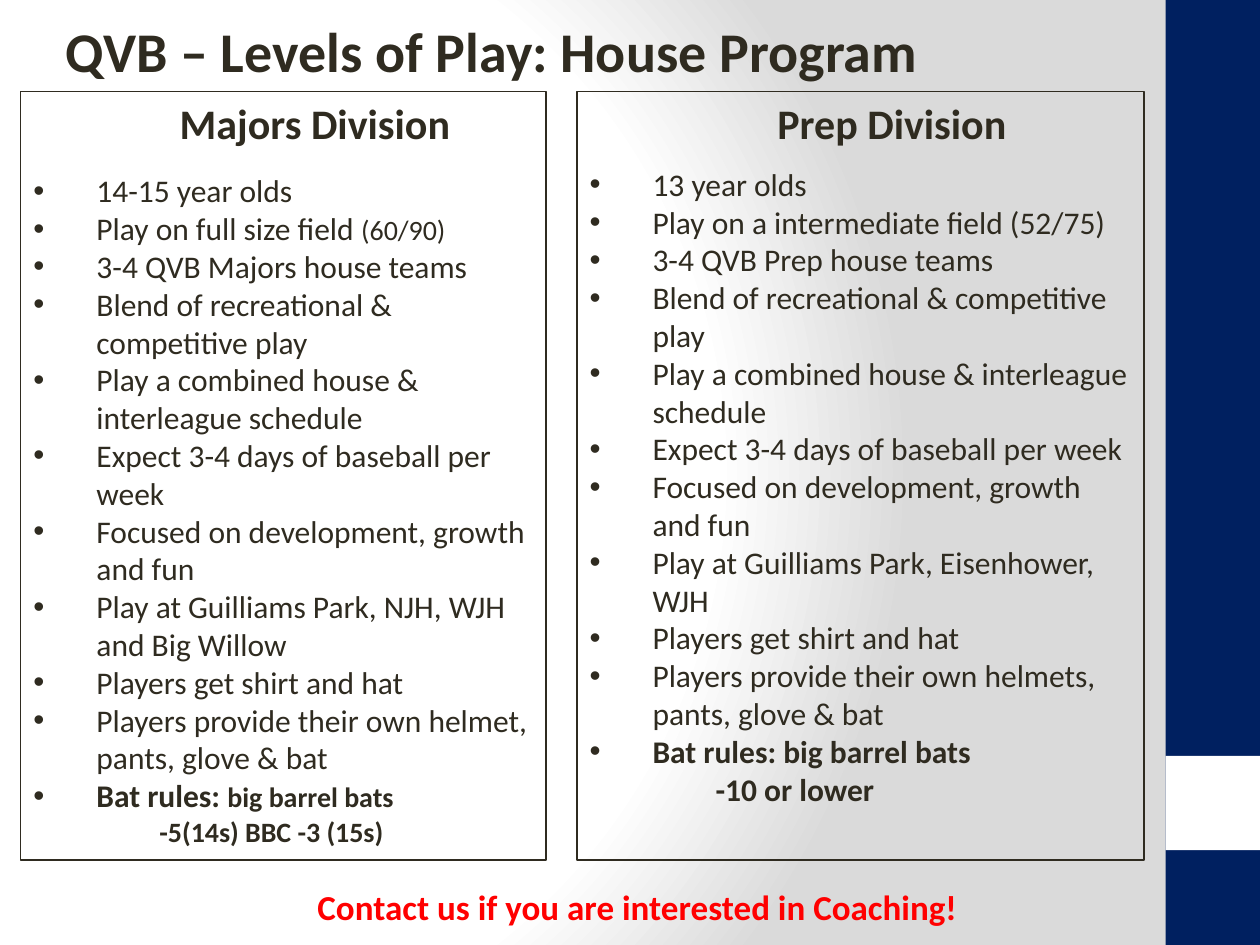
from lxml import etree
from pptx import Presentation
from pptx.dml.color import RGBColor
from pptx.enum.shapes import MSO_SHAPE
from pptx.enum.text import MSO_ANCHOR, MSO_AUTO_SIZE, PP_ALIGN
from pptx.oxml import parse_xml
from pptx.oxml.ns import nsdecls, qn
from pptx.util import Cm, Pt

RECTANGLE = MSO_SHAPE.RECTANGLE
CENTER, LEFT = PP_ALIGN.CENTER, PP_ALIGN.LEFT
TOP, NO_FIT = MSO_ANCHOR.TOP, MSO_AUTO_SIZE.NONE

FONT = "Calibri"
INK, NAVY, WHITE, GREY, RED = "2F2B20", "002060", "FFFFFF", "DADADA", "FF0000"
INDENT = 1.27
PANEL_TOP, PANEL_HEIGHT = 1.84, 15.5

TITLE = "QVB – Levels of Play: House Program"
CONTACT = "Contact us if you are interested in Coaching!"
# Every line is a list of (text, size) parts.
DIVISIONS = [
    {
        "heading": "Majors Division", "left": 0.42, "width": 10.59, "gap": 13.4,
        "points": [
            [("14-15 year olds", 18)],
            [("Play on full size field ", 18), ("(60/90)", 16)],
            [("3-4 QVB Majors house teams", 18)],
            [("Blend of recreational & competitive play", 18)],
            [("Play a combined house & interleague schedule", 18)],
            [("Expect 3-4 days of baseball per week", 18)],
            [("Focused on development, growth and fun", 18)],
            [("Play at Guilliams Park, NJH, WJH and Big Willow", 18)],
            [("Players get shirt and hat", 18)],
            [("Players provide their own helmet, pants, glove & bat", 18)],
        ],
        "bat_rules": [("Bat rules: ", 18), ("big barrel bats", 16)],
        "bat_detail": [("-5(14s) BBC -3 (15s)", 16)],
    },
    {
        "heading": "Prep Division", "left": 11.63, "width": 11.43, "gap": 9.6,
        "points": [
            [("13 year olds", 18)],
            [("Play on a intermediate field (52/75)", 18)],
            [("3-4 QVB Prep house teams", 18)],
            [("Blend of recreational & competitive play", 18)],
            [("Play a combined house & interleague schedule", 18)],
            [("Expect 3-4 days of baseball per week", 18)],
            [("Focused on development, growth and fun", 18)],
            [("Play at Guilliams Park, Eisenhower, WJH", 18)],
            [("Players get shirt and hat", 18)],
            [("Players provide their own helmets, pants, glove & bat", 18)],
        ],
        "bat_rules": [("Bat rules: big barrel bats", 18)],
        "bat_detail": [("-10 or lower", 18)],
    },
]
# top, height, colour
SIDE_BARS = [(0, 19.05, NAVY), (15.24, 1.9, WHITE)]


def rgb(value):
    return RGBColor.from_string(value)


def place(shape, left, top, width, height):
    shape.left, shape.top = Cm(left), Cm(top)
    shape.width, shape.height = Cm(width), Cm(height)


def style(run, size, bold, colour=INK):
    run.font.name = FONT
    run.font.size = Pt(size)
    run.font.bold = bold
    run.font.color.rgb = rgb(colour)


def write(paragraph, parts, bold=False, margin=INDENT, bullet=False, align=LEFT):
    """Fill a paragraph with sized runs and set its indent and bullet."""
    for text, size in parts:
        run = paragraph.add_run()
        run.text = text
        style(run, size, bold)
    paragraph.alignment = align
    paragraph.space_before = paragraph.space_after = Pt(0)
    properties = paragraph._p.get_or_add_pPr()
    properties.set("marL", str(Cm(margin)))
    properties.set("indent", str(-Cm(INDENT) if bullet else 0))
    if bullet:
        font = etree.SubElement(properties, qn("a:buFont"))
        font.set("typeface", "Arial")
        etree.SubElement(properties, qn("a:buChar")).set("char", "•")
    else:
        etree.SubElement(properties, qn("a:buNone"))


def set_background(slide):
    """Radial gradient, white at the left and grey at the right."""
    stops = "".join(
        f'<a:gs pos="{position * 1000}"><a:srgbClr val="{colour}"/></a:gs>'
        for position, colour in [(0, WHITE), (75, WHITE), (100, GREY)])
    slide.background.fill.solid()
    properties = slide._element.cSld.bg.bgPr
    properties.replace(properties[0], parse_xml(
        f'<a:gradFill {nsdecls("a")} rotWithShape="1"><a:gsLst>{stops}</a:gsLst>'
        '<a:path path="circle"><a:fillToRect l="20000" t="50000" r="100000" b="50000"/>'
        '</a:path></a:gradFill>'))


def fill_panel(panel, division):
    place(panel, division["left"], PANEL_TOP, division["width"], PANEL_HEIGHT)
    panel.line.color.rgb = rgb(INK)
    panel.line.width = Pt(0.75)
    frame = panel.text_frame
    frame.auto_size = NO_FIT
    frame.vertical_anchor = TOP
    heading = frame.paragraphs[0]
    write(heading, [(division["heading"], 24)], bold=True, align=CENTER)
    heading.space_after = Pt(division["gap"])
    for point in division["points"]:
        write(frame.add_paragraph(), point, bullet=True)
    write(frame.add_paragraph(), division["bat_rules"], bold=True, bullet=True)
    write(frame.add_paragraph(), division["bat_detail"], bold=True, margin=2 * INDENT)


def main():
    deck = Presentation()
    deck.slide_width, deck.slide_height = Cm(25.4), Cm(19.05)
    slide = deck.slides.add_slide(deck.slide_layouts[3])
    set_background(slide)

    for top, height, colour in SIDE_BARS:
        bar = slide.shapes.add_shape(RECTANGLE, Cm(23.5), Cm(top), Cm(1.9), Cm(height))
        bar.shadow.inherit = False
        bar.fill.solid()
        bar.fill.fore_color.rgb = rgb(colour)
        bar.line.fill.background()

    title, *panels = slide.placeholders
    place(title, 1.07, 0.2, 21.16, 1.63)
    title.text_frame.text = TITLE
    title.text_frame.auto_size = NO_FIT
    title.text_frame.paragraphs[0].alignment = LEFT
    style(title.text_frame.paragraphs[0].runs[0], 32, True)

    for panel, division in zip(panels, DIVISIONS):
        fill_panel(panel, division)

    contact = slide.shapes.add_textbox(Cm(6.15), Cm(17.73), Cm(13.67), Cm(1.12))
    contact.text_frame.text = CONTACT
    contact.text_frame.word_wrap = False
    style(contact.text_frame.paragraphs[0].runs[0], 20, True, RED)

    deck.save("out.pptx")


if __name__ == "__main__":
    main()
